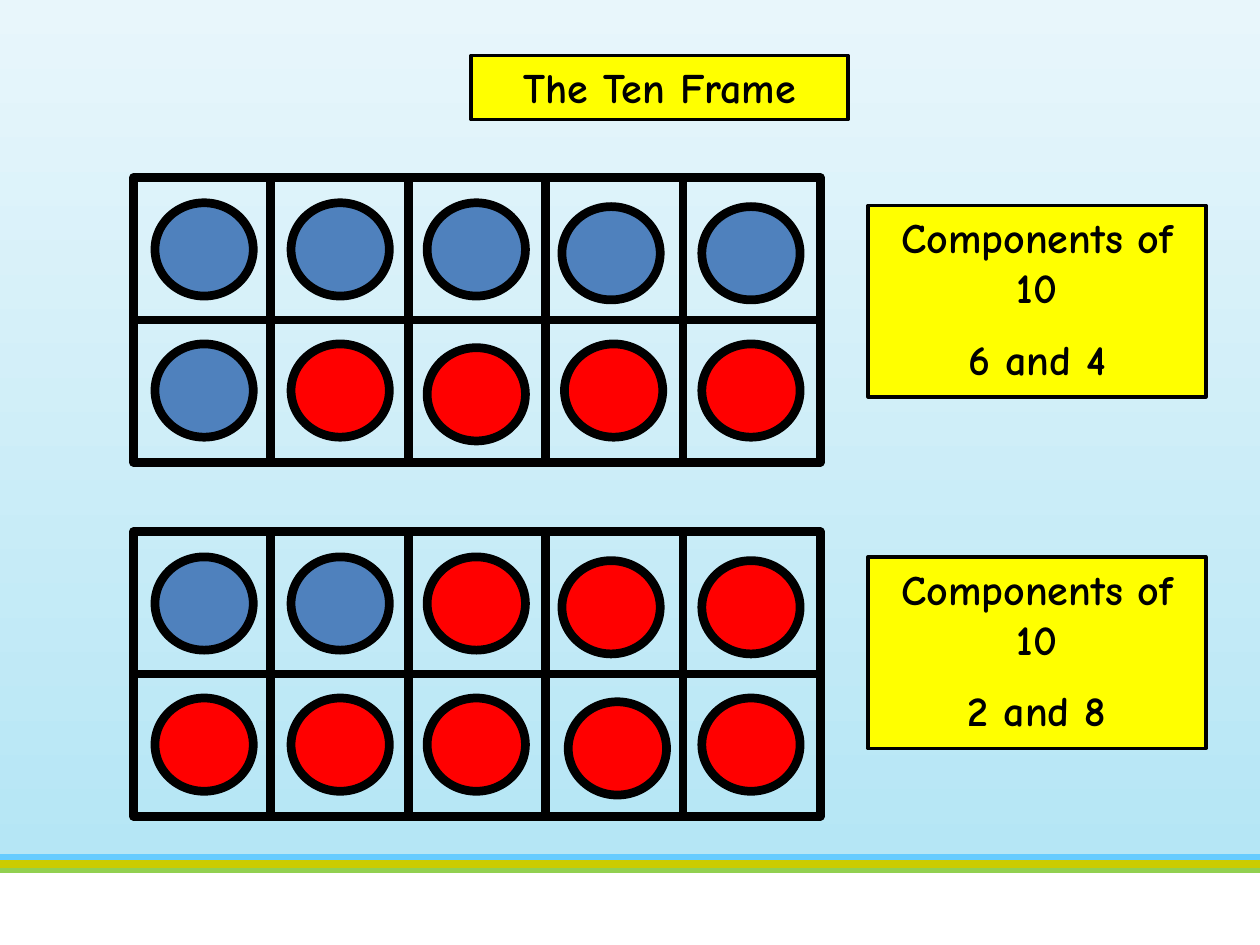
from itertools import product

from lxml import etree
from pptx import Presentation
from pptx.dml.color import RGBColor
from pptx.enum.shapes import MSO_CONNECTOR, MSO_SHAPE
from pptx.enum.text import MSO_ANCHOR, PP_ALIGN
from pptx.oxml.ns import qn
from pptx.util import Inches, Pt

COLORS = {
    "sky_low": "B5E6F5", "sky_high": "E8F6FB",
    "green": "92D050", "light_blue": "66CCFF", "olive": "CCCC00",
    "yellow": "FFFF00", "black": "000000", "blue": "4F81BD", "red": "FF0000",
}
FONT = "Comic Neue"
ROWS, COLUMNS = 2, 5
COUNTER_LEFTS = (0.17, 1.25, 2.33, 3.4, 4.51)
COUNTER_TOPS = (0.2, 1.32)
COUNTER_SIZE = (0.78, 0.74)


def color(name):
    return RGBColor.from_string(COLORS[name])


def style(shape, fill, line_width):
    """Fill a shape, or leave it open when fill is None, and outline it in black."""
    if fill:
        shape.fill.solid()
        shape.fill.fore_color.rgb = color(fill)
    else:
        shape.fill.background()
    shape.line.color.rgb = color("black")
    shape.line.width = Pt(line_width)


def add_shape(shapes, kind, box):
    shape = shapes.add_shape(kind, *map(Inches, box))
    shape.shadow.inherit = False
    return shape


def add_backdrop(slide, box):
    left, top, width, height = box
    sky = add_shape(slide.shapes, MSO_SHAPE.RECTANGLE, box)
    sky.line.fill.background()
    sky.fill.gradient()
    sky.fill.gradient_angle = 90
    for stop, name in zip(sky.fill.gradient_stops, ("sky_low", "sky_high")):
        stop.color.rgb = color(name)
    bottom = top + height
    for name, offset in (("green", 0.09), ("light_blue", 0), ("olive", 0.05)):
        y = Inches(bottom + offset)
        stripe = slide.shapes.add_connector(
            MSO_CONNECTOR.STRAIGHT, Inches(left), y, Inches(left + width), y)
        stripe.line.color.rgb = color(name)
        stripe.line.width = Pt(4.5)
        etree.SubElement(stripe.element.spPr, qn("a:effectLst"))


def write_label(shape, lines):
    style(shape, "yellow", 2)
    frame = shape.text_frame
    frame.word_wrap = True
    frame.vertical_anchor = MSO_ANCHOR.TOP
    for index, text in enumerate(lines):
        paragraph = frame.add_paragraph() if index else frame.paragraphs[0]
        paragraph.alignment = PP_ALIGN.CENTER
        paragraph.space_before = Pt(12 if index else 0)
        run = paragraph.add_run()
        run.text = text
        run.font.name = FONT
        run.font.size = Pt(24)
        run.font.bold = True
        run.font.color.rgb = color("black")


def add_title(slide, box):
    title = slide.shapes.title
    title.left, title.top, title.width, title.height = map(Inches, box)
    write_label(title, ["The Ten Frame"])
    slide.shapes.element.append(title.element)  # in front of the backdrop


def add_ten_frame(slide, box, blue_count, nudges):
    """Draw the grid and its counters; nudges shift counters by (row, column)."""
    left, top, width, height = box
    cell_width, cell_height = width / COLUMNS, height / ROWS
    cells = list(product(range(ROWS), range(COLUMNS)))
    grid = slide.shapes.add_group_shape()
    for row, column in cells:
        cell = add_shape(grid.shapes, MSO_SHAPE.RECTANGLE, (
            left + column * cell_width, top + row * cell_height,
            cell_width, cell_height))
        style(cell, None, 5)
    for index, (row, column) in enumerate(cells):
        dx, dy = nudges.get((row, column), (0, 0))
        counter = add_shape(slide.shapes, MSO_SHAPE.OVAL, (
            left + COUNTER_LEFTS[column] + dx, top + COUNTER_TOPS[row] + dy,
            *COUNTER_SIZE))
        style(counter, "blue" if index < blue_count else "red", 5)


def add_components(slide, box, blue_count):
    label = add_shape(slide.shapes, MSO_SHAPE.RECTANGLE, box)
    write_label(label, ["Components of 10",
                        f"{blue_count} and {ROWS * COLUMNS - blue_count}"])


def main():
    presentation = Presentation()
    presentation.slide_width = Inches(10)
    presentation.slide_height = Inches(7.5)
    slide = presentation.slides.add_slide(presentation.slide_layouts[5])

    add_backdrop(slide, (0, 0, 10, 6.81))
    add_title(slide, (3.74, 0.44, 2.99, 0.51))
    low = (0, 0.03)
    examples = (
        (1.41, 1.63, 6, {(0, 3): low, (0, 4): low, (1, 2): low, (1, 3): (0.02, 0)}),
        (4.22, 4.42, 2, {(0, 3): low, (0, 4): low, (1, 3): (0.05, 0.03)}),
    )
    for frame_top, label_top, blue_count, nudges in examples:
        add_ten_frame(slide, (1.06, frame_top, 5.45, 2.26), blue_count, nudges)
        add_components(slide, (6.89, label_top, 2.68, 1.52), blue_count)

    presentation.save("out.pptx")


if __name__ == "__main__":
    main()
